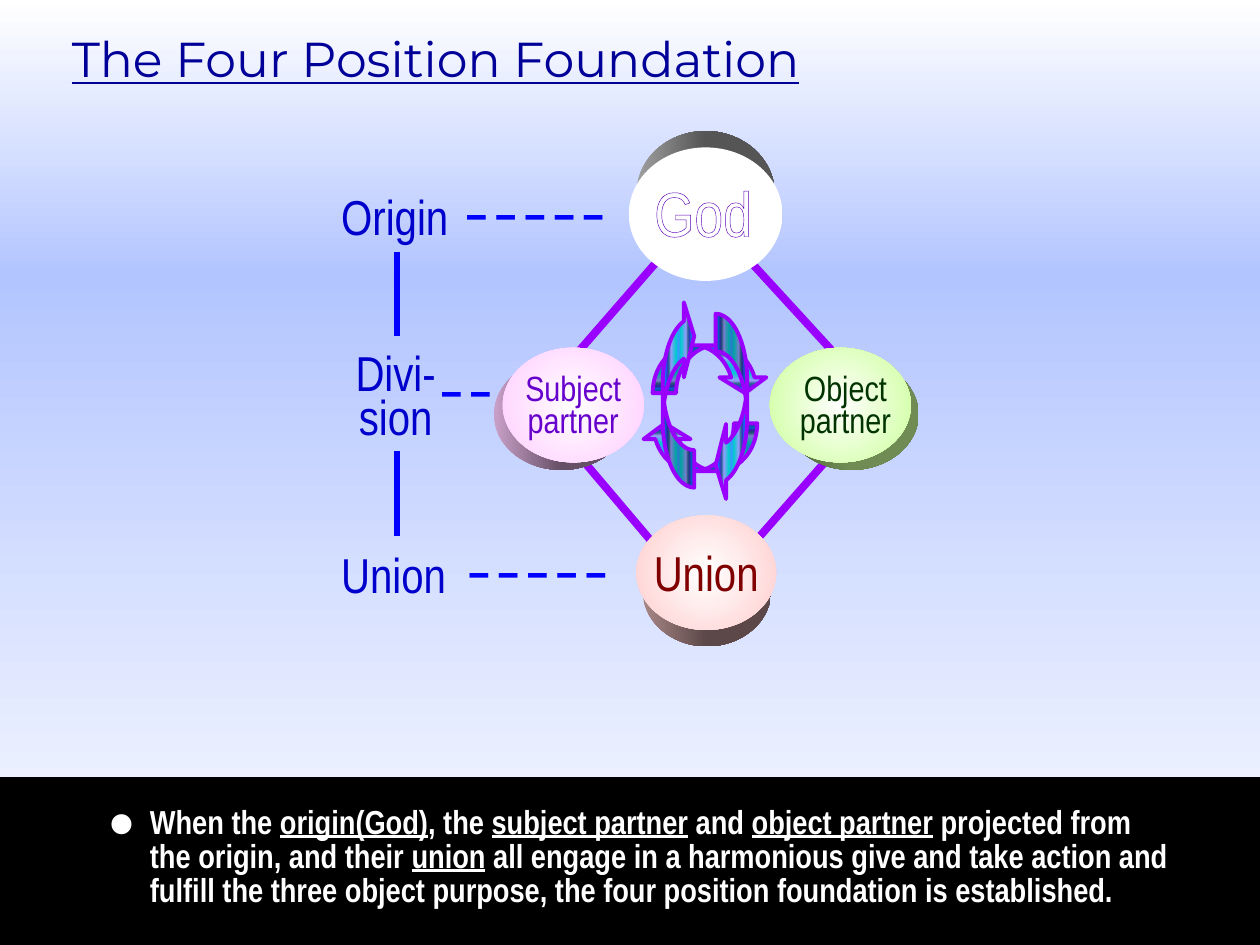
from lxml import etree
from pptx import Presentation
from pptx import util as u
from pptx.dml.color import RGBColor
from pptx.enum import shapes as kinds, text as styles
from pptx.oxml.ns import qn

NARROW = "Arial Narrow"
PURPLE, BLUE, LABEL_BLUE = "9900FF", "0000FF", "0000CC"
BACKGROUND = [(0, "FFFFFF"), (29, "B3C5FF"), (100, "FFFFFF")]
METAL = [(0, "006699"), (10, "1170FF"), (14, "3333CC"), (20, "2E6792"),
         (26, "9999FF"), (42, "00CCCC"), (50, "3399FF"), (58, "00CCCC"),
         (74, "9999FF"), (80, "2E6792"), (86, "3333CC"), (90, "1170FF"),
         (100, "006699")]
DIAMOND = [(5.48, 1.77, 4.2, 3.24), (5.61, 1.7, 6.93, 3.14),
           (4.2, 3.15, 5.47, 4.65), (6.94, 3.22, 5.65, 4.69)]
LEVEL_LINES = [(3.15, 2, 3.15, 2.67), (3.15, 3.58, 3.15, 4.25)]
SHORT_ARROW, LONG_ARROW = (0.49, 0.98, 0.33), (1.19, 2.38, 0.33)
ARROWS = [
    ((5.45, 2.47, 0.38, 0.92), 270, SHORT_ARROW),
    ((5.36, 3.09, 0.38, 0.92), 90, SHORT_ARROW),
    ((5.26, 2.37, 0.25, 1.5), 180, LONG_ARROW),
    ((5.68, 2.49, 0.25, 1.5), 0, LONG_ARROW),
]
POSITIONS = [
    {"front": (3.99, 2.76, 1.12, 0.91), "back": (3.92, 2.85, 1.07, 0.88),
     "fill": "FFCCFF", "sides": ("C9A0C9", "665066"),
     "lines": ["Subject", "partner"], "box": (4.01, 2.94, 1.08, 0.6),
     "size": 20, "color": "6600CC", "spacing": 0.75},
    {"front": (6.11, 2.76, 1.12, 0.91), "back": (6.22, 2.85, 1.07, 0.88),
     "fill": "CCFF99", "sides": ("506638", "708C54"),
     "lines": ["Object", "partner"], "box": (6.17, 2.94, 1.08, 0.6),
     "size": 20, "color": "003300", "spacing": 0.75},
    {"front": (5.05, 4.09, 1.11, 0.91), "back": (5.1, 4.25, 1.02, 0.88),
     "fill": "FFCCCC", "sides": ("A88686", "5C4848"),
     "lines": ["Union"], "box": (5.02, 4.26, 1.17, 0.57),
     "size": 28, "color": "800000", "spacing": 1},
    {"front": (4.99, 1.17, 1.22, 1.06), "back": (5.05, 1.04, 1.1, 1),
     "fill": "FFFFFF", "sides": ("A0A0A0", "555555"),
     "lines": ["God"], "box": (4.88, 1.47, 1.4, 0.44),
     "size": 36, "color": "FFFFFF", "spacing": 0.75, "outline": ("5A00B4", 1.5)},
]
LEVELS = [
    (["Origin"], (2.61, 1.43, 1.25, 0.57), False),
    (["Divi-", "sion"], (2.67, 2.78, 0.94, 0.8), True),
    (["Union"], (2.61, 4.27, 1.14, 0.57), False),
]
DASHES = [("_ _ _ _ _", (3.61, 1.33, 1.46, 0.5)),
          ("_ _", (3.41, 2.73, 0.69, 0.5)),
          ("_ _ _ _ _", (3.63, 4.17, 1.56, 0.5))]
STATEMENT = [
    ("When the ", False), ("origin(God)", True), (", the ", False),
    ("subject partner", True), (" and ", False), ("object partner", True),
    (" projected from the origin, and their ", False), ("union", True),
    (" all engage in a harmonious give and take action and fulfill the three "
     "object purpose, the four position foundation is established.", False),
]


def rgb(value):
    return RGBColor.from_string(value)


def inches(values):
    return [u.Inches(value) for value in values]


def child(parent, tag, **attributes):
    return etree.SubElement(parent, qn(tag), attributes)


def set_gradient(owner, fill, stops, angle=0, radial=False):
    fill.gradient()
    gradient = owner.find(".//" + qn("a:gradFill"))
    for part in list(gradient):
        gradient.remove(part)
    stop_list = child(gradient, "a:gsLst")
    for place, color in stops:
        stop = child(stop_list, "a:gs", pos=str(place * 1000))
        child(stop, "a:srgbClr", val=color)
    if radial:
        way = child(gradient, "a:path", path="circle")
        child(way, "a:fillToRect", l="50000", t="50000", r="50000", b="50000")
    else:
        child(gradient, "a:lin", ang=str(angle * 60000), scaled="0")


def add_preset(slide, kind, box):
    shape = slide.shapes.add_shape(kind, *inches(box))
    shape.shadow.inherit = False
    shape.line.fill.background()
    return shape


def add_line(slide, ends, color, width):
    line = slide.shapes.add_connector(kinds.MSO_CONNECTOR.STRAIGHT, *inches(ends))
    line.line.color.rgb = rgb(color)
    line.line.width = u.Pt(width)
    child(line._element.spPr, "a:effectLst")


def write(paragraph, words, size, color, font=NARROW, bold=False,
          underline=False, outline=None):
    run = paragraph.add_run()
    run.text = words
    run.font.name = font
    run.font.size = u.Pt(size)
    run.font.bold = bold
    run.font.underline = underline
    run.font.color.rgb = rgb(color)
    if outline:
        edge = etree.Element(qn("a:ln"), w=str(u.Pt(outline[1])))
        child(child(edge, "a:solidFill"), "a:srgbClr", val=outline[0])
        run._r.get_or_add_rPr().insert(0, edge)


def add_label(slide, lines, box, size, color, spacing=1, centered=False, **look):
    frame = slide.shapes.add_textbox(*inches(box)).text_frame
    frame.word_wrap = True
    for index, words in enumerate(lines):
        paragraph = frame.add_paragraph() if index else frame.paragraphs[0]
        paragraph.line_spacing = spacing
        if centered:
            paragraph.alignment = styles.PP_ALIGN.CENTER
        write(paragraph, words, size, color, **look)


def place(placeholder, box):
    placeholder.left, placeholder.top, placeholder.width, placeholder.height = inches(box)
    frame = placeholder.text_frame
    frame.auto_size = styles.MSO_AUTO_SIZE.NONE
    frame.vertical_anchor = styles.MSO_ANCHOR.TOP
    paragraph = frame.paragraphs[0]
    paragraph.alignment = styles.PP_ALIGN.LEFT
    paragraph.space_before = u.Pt(0)
    return paragraph


def add_position(slide, position):
    depth = add_preset(slide, kinds.MSO_SHAPE.OVAL, position["back"])
    light, dark = position["sides"]
    set_gradient(depth._element.spPr, depth.fill, [(0, light), (50, dark), (100, dark)])
    face = add_preset(slide, kinds.MSO_SHAPE.OVAL, position["front"])
    set_gradient(face._element.spPr, face.fill,
                 [(0, "FFFFFF"), (100, position["fill"])], radial=True)
    add_label(slide, position["lines"], position["box"], position["size"],
              position["color"], position["spacing"], centered=True,
              outline=position.get("outline"))


def main():
    presentation = Presentation()
    presentation.slide_width, presentation.slide_height = inches((10, 7.5))
    slide = presentation.slides.add_slide(presentation.slide_layouts[1])
    set_gradient(slide._element, slide.background.fill, BACKGROUND, angle=90)

    title = place(slide.shapes.title, (0.47, 0.18, 7.19, 0.57))
    write(title, "The Four Position Foundation", 28, "000099", "Montserrat", underline=True)

    for ends in DIAMOND:
        add_line(slide, ends, PURPLE, 4.5)
    band = add_preset(slide, kinds.MSO_SHAPE.RECTANGLE, (0, 6.17, 10, 1.33))
    band.fill.solid()
    band.fill.fore_color.rgb = rgb("000000")
    band.line.color.rgb = rgb("000000")
    band.line.width = u.Pt(0.75)

    for box, rotation, adjustments in ARROWS:
        arrow = add_preset(slide, kinds.MSO_SHAPE.CURVED_LEFT_ARROW, box)
        arrow.rotation = rotation
        for index, value in enumerate(adjustments):
            arrow.adjustments[index] = value
        set_gradient(arrow._element.spPr, arrow.fill, METAL)
        arrow.line.color.rgb = rgb(PURPLE)
        arrow.line.width = u.Pt(2.25)

    for position in POSITIONS:
        add_position(slide, position)

    body = slide.placeholders[1]
    slide.shapes._spTree.append(body._element)
    statement = place(body, (1.09, 6.36, 8.32, 0.92))
    statement.line_spacing = 0.85
    properties = statement._p.get_or_add_pPr()
    properties.set("marL", "0")
    properties.set("indent", "0")
    child(properties, "a:buNone")
    for words, underline in STATEMENT:
        write(statement, words, 19, "FFFFFF", bold=True, underline=underline)
    add_label(slide, ["•"], (0.75, 6.33, 0.45, 0.62), 48, "FFFFFF", 0.6,
              font="Times New Roman")

    for words, box in DASHES:
        add_label(slide, [words], box, 24, BLUE, font="Roboto", bold=True)
    for lines, box, centered in LEVELS:
        add_label(slide, lines, box, 28, LABEL_BLUE, 0.75 if centered else 1,
                  centered, outline=("FFFFFF", 0.75))
    for ends in LEVEL_LINES:
        add_line(slide, ends, BLUE, 3)

    presentation.save("out.pptx")


if __name__ == "__main__":
    main()
